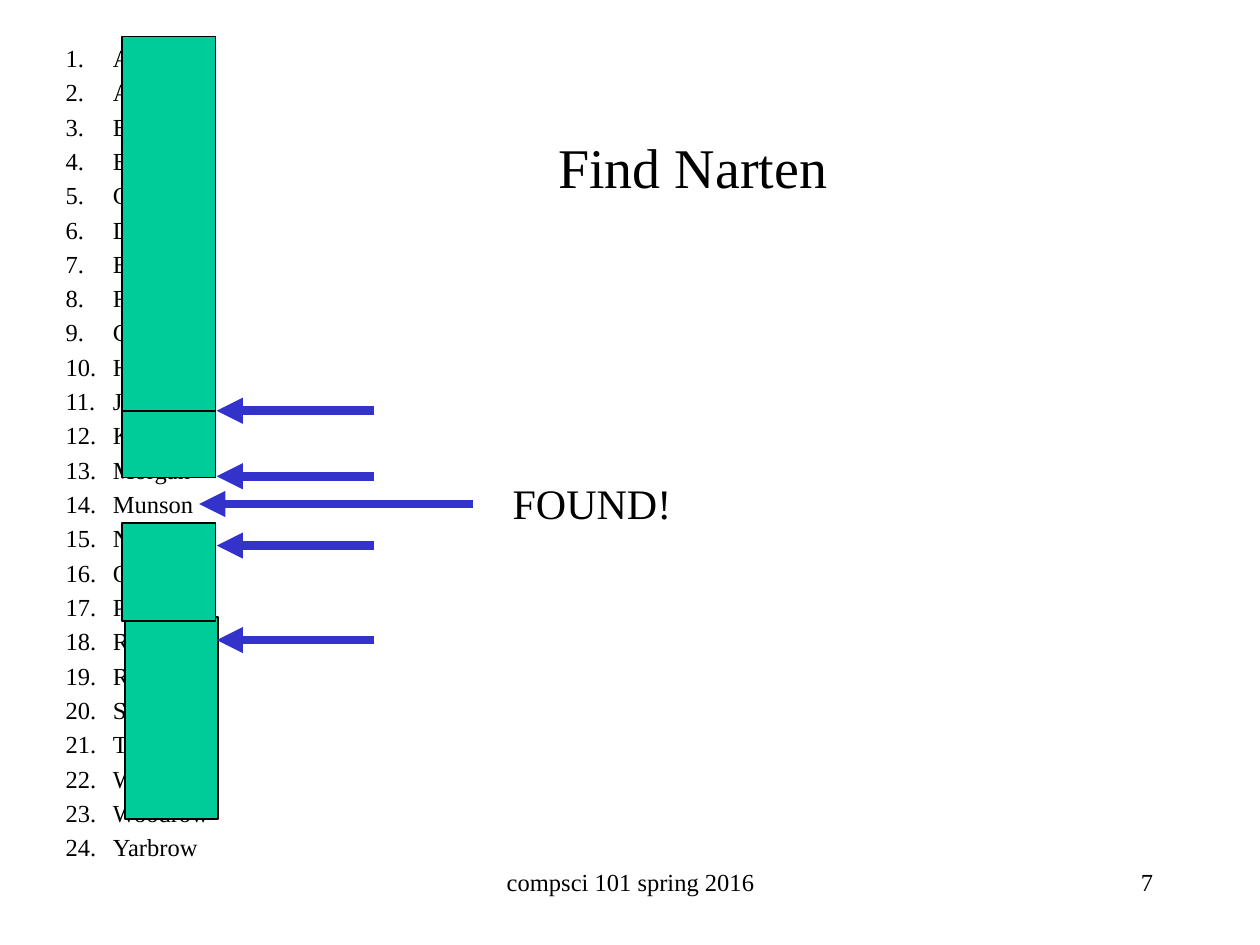
import collections

import pptx
import pptx.dml.color
import pptx.enum.shapes
import pptx.enum.text
import pptx.oxml
import pptx.oxml.ns
import pptx.util

BLACK = pptx.dml.color.RGBColor(0x00, 0x00, 0x00)
GREEN = pptx.dml.color.RGBColor(0x00, 0xCC, 0x99)
BLUE = pptx.dml.color.RGBColor(0x33, 0x33, 0xCC)
FONT = "Times New Roman"
NAME_SIZE = 14
ALIGN = pptx.enum.text.PP_ALIGN
DRAWING = pptx.oxml.ns.nsdecls("a")

WIDTH, HEIGHT = pptx.util.Inches(10), pptx.util.Inches(7.5)
COLUMN, ROW = WIDTH / 100, HEIGHT / 75
Box = collections.namedtuple("Box", "left top width height")

LIST_BOX = Box(4.2, 2.9, 86.5, 64.6)
TITLE_BOX = Box(43.3, 10, 25.5, 6.4)
SEARCH_BOX = Box(9.7, 2.9, 45, 62.1)
FOOTER_BOX = Box(34.2, 68.3, 58.3, 5)

NAMES = (
    "Anderson Applegate Bethune Brooks Carter Douglas Edwards Franklin "
    "Griffin Holhouser Jefferson Klatchy Morgan Munson Narten Oliver "
    "Parker Rivers Roberts Stevenson Thomas Wilson Woodrow Yarbrow"
).split()
COVERS = [(0, 0, 30.3), (0.2, 46.1, 16), (0, 38.6, 7.8), (0, 29.7, 5.3)]
COVER_WIDTH = 7.4
PROBES = [(20, 7.5, 29.7), (20, 7.5, 47.9), (20, 7.5, 40.4), (20, 7.5, 34.9), (27.8, 6.1, 37.1)]


def lengths(box):
    """Turn a box in columns and rows into slide lengths."""
    return [round(value * unit) for value, unit in zip(box, (COLUMN, ROW) * 2)]


def inside(box, left, top, width, height):
    """Return a box placed relative to the corner of another."""
    return Box(box.left + left, box.top + top, width, height)


def apply(target, values):
    """Set each named attribute of an object."""
    for name, value in values.items():
        setattr(target, name, value)


def write(shape, lines, size, alignment=ALIGN.LEFT):
    """Fill a shape with formatted paragraphs and return them."""
    frame = shape.text_frame
    frame.text = "\n".join(lines)
    apply(frame, {
        "word_wrap": True,
        "auto_size": pptx.enum.text.MSO_AUTO_SIZE.NONE,
        "vertical_anchor": pptx.enum.text.MSO_ANCHOR.TOP,
    })
    for paragraph in frame.paragraphs:
        paragraph.alignment = alignment
        for run in paragraph.runs:
            apply(run.font, {"name": FONT, "size": pptx.util.Pt(size)})
            run.font.color.rgb = BLACK
    return frame.paragraphs


def add_label(slide, box, text, size, alignment=ALIGN.LEFT):
    """Add a text box with one line."""
    write(slide.shapes.add_textbox(*lengths(box)), [text], size, alignment)


def place(shape, box):
    """Move a placeholder into a box."""
    apply(shape, dict(zip(("left", "top", "width", "height"), lengths(box))))


def fill_title(slide, box):
    """Write the title in its placeholder."""
    place(slide.shapes.title, box)
    write(slide.shapes.title, ["Find Narten"], 32)


def fill_names(slide, box):
    """Write the numbered names in the body placeholder."""
    body = slide.placeholders[1]
    place(body, box)
    indent = round(3.75 * COLUMN)
    for paragraph in write(body, NAMES, NAME_SIZE):
        apply(paragraph, {"line_spacing": 1.0, "space_before": pptx.util.Pt(NAME_SIZE * 0.2)})
        properties = paragraph._p.get_or_add_pPr()
        properties.set("marL", str(indent))
        properties.set("indent", str(-indent))
        properties.append(pptx.oxml.parse_xml(f'<a:buAutoNum {DRAWING} type="arabicPeriod"/>'))


def add_cover(slide, box):
    """Cover a span of names with a green block."""
    cover = slide.shapes.add_shape(pptx.enum.shapes.MSO_SHAPE.RECTANGLE, *lengths(box))
    cover.shadow.inherit = False
    cover.fill.solid()
    cover.fill.fore_color.rgb = GREEN
    cover.line.color.rgb = BLACK
    cover.line.width = pptx.util.Pt(1)


def add_probe(slide, box):
    """Draw an arrow from the right edge of a box to its left edge."""
    left, top, width, _ = lengths(box)
    arrow = slide.shapes.add_connector(
        pptx.enum.shapes.MSO_CONNECTOR.STRAIGHT, left + width, top, left, top
    )
    arrow.line.color.rgb = BLUE
    arrow.line.width = pptx.util.Pt(5)
    arrow.line._get_or_add_ln().append(
        pptx.oxml.parse_xml(f'<a:tailEnd {DRAWING} type="triangle"/>')
    )
    arrow._element.spPr.append(pptx.oxml.parse_xml(f"<a:effectLst {DRAWING}/>"))


def add_search(slide, box):
    """Show the eliminated spans, the probes and the result."""
    for left, top, height in COVERS:
        add_cover(slide, inside(box, left, top, COVER_WIDTH, height))
    for start, tip, top in PROBES:
        add_probe(slide, inside(box, tip, top, start - tip, 0))
    add_label(slide, inside(box, 30, 34.5, 14.8, 5), "FOUND!", 24)


def add_footer(slide, box):
    """Add the course name and the slide number."""
    course = inside(box, 0, 0, 31.7, box.height)
    number = inside(box, box.width - 20.8, 0, 20.8, box.height)
    add_label(slide, course, "compsci 101 spring 2016", 14, ALIGN.CENTER)
    add_label(slide, number, "7", 14, ALIGN.RIGHT)


def main():
    """Build and save the slide."""
    presentation = pptx.Presentation()
    apply(presentation, {"slide_width": WIDTH, "slide_height": HEIGHT})
    slide = presentation.slides.add_slide(presentation.slide_layouts[1])
    fill_names(slide, LIST_BOX)
    fill_title(slide, TITLE_BOX)
    add_search(slide, SEARCH_BOX)
    add_footer(slide, FOOTER_BOX)
    presentation.save("out.pptx")


if __name__ == "__main__":
    main()
